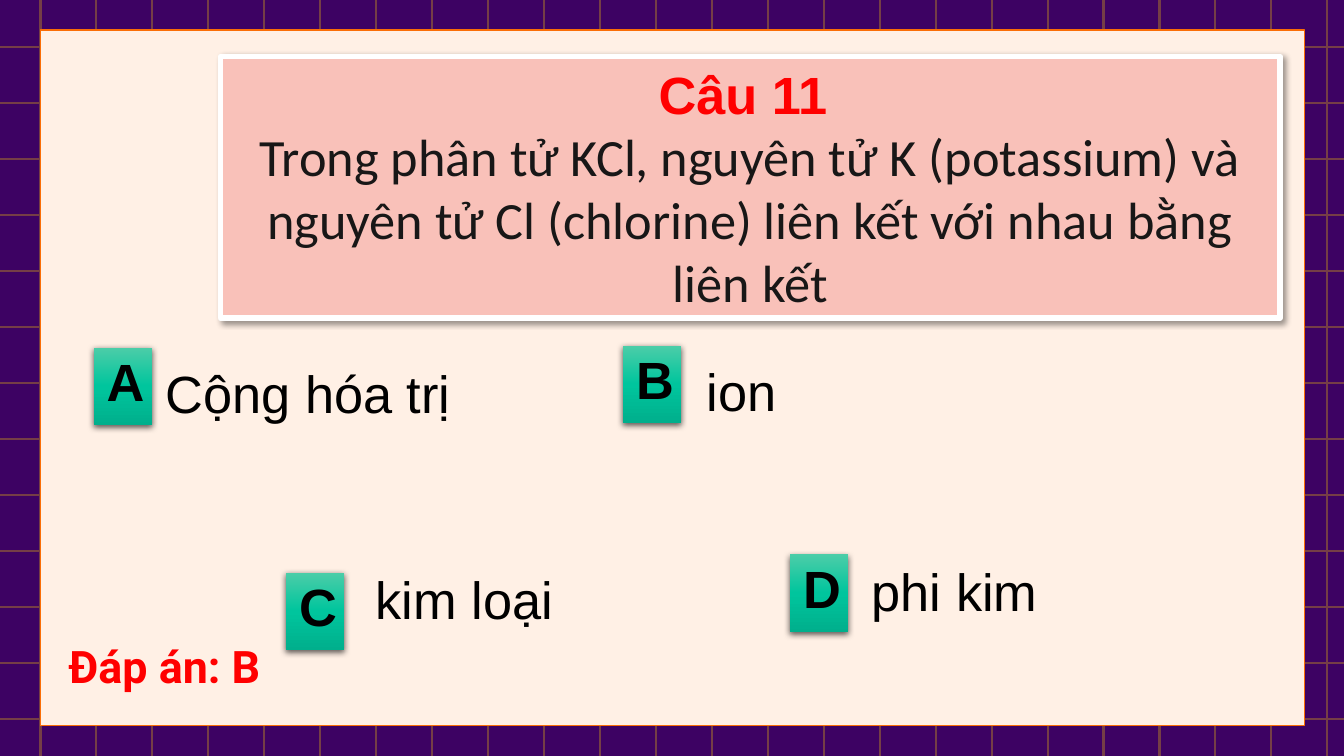
from copy import deepcopy

from lxml import etree
from pptx import Presentation
from pptx.dml.color import RGBColor
from pptx.enum.shapes import MSO_CONNECTOR, MSO_SHAPE
from pptx.enum.text import MSO_ANCHOR, MSO_AUTO_SIZE, PP_ALIGN
from pptx.oxml.ns import qn
from pptx.util import Cm, Pt

RECTANGLE = MSO_SHAPE.RECTANGLE
STRAIGHT = MSO_CONNECTOR.STRAIGHT
LEFT, CENTER, RIGHT = PP_ALIGN.LEFT, PP_ALIGN.CENTER, PP_ALIGN.RIGHT
TOP, MIDDLE, BOTTOM = MSO_ANCHOR.TOP, MSO_ANCHOR.MIDDLE, MSO_ANCHOR.BOTTOM

COLORS = {
    "wall": "3D0263", "grid": "753E46", "panel": "FFF0E5", "panel edge": "FA6D06",
    "question": "F9C1B9", "question edge": "FFFFFF", "question text": "181717",
    "accent": "FF0000", "ink": "000000",
}
TILE_GRADIENT = [(0, "4BCDA8"), (0.5, "00C59D"), (1, "00AF8C")]
WIDTH, HEIGHT, GRID_STEP = 33.87, 19.05, 1.41
TEXT_SIZE = 37.4


def write(shape, paragraphs, align, anchor, margin):
    """Fill a shape with paragraphs of (text, font, size, bold, colour name)."""
    frame = shape.text_frame
    settings = {"word_wrap": True, "auto_size": MSO_AUTO_SIZE.NONE, "vertical_anchor": anchor}
    for side in ("left", "right", "top", "bottom"):
        settings[f"margin_{side}"] = Cm(margin)
    for name, value in settings.items():
        setattr(frame, name, value)
    for index, (text, font, size, bold, color) in enumerate(paragraphs):
        para = frame.add_paragraph() if index else frame.paragraphs[0]
        para.alignment = align
        span = para.add_run()
        span.text = text
        for name, value in {"name": font, "size": Pt(size), "bold": bold}.items():
            setattr(span.font, name, value)
        span.font.color.rgb = RGBColor.from_string(COLORS[color])


def cast_shadow(shape, opacity, blur, distance, angle):
    shape.shadow.inherit = False
    effects = shape.element.spPr.find(qn("a:effectLst"))
    shadow = etree.SubElement(effects, qn("a:outerShdw"), {
        "blurRad": str(Pt(blur)), "dist": str(Pt(distance)),
        "dir": str(angle * 60000), "algn": "ctr", "rotWithShape": "0"})
    color = etree.SubElement(shadow, qn("a:srgbClr"), val=COLORS["ink"])
    etree.SubElement(color, qn("a:alpha"), val=str(opacity * 1000))


deck = Presentation()
deck.slide_width, deck.slide_height = Cm(WIDTH), Cm(HEIGHT)
page = deck.slides.add_slide(deck.slide_layouts[5])
shapes = page.shapes

# Wall with its grid
page.background.fill.solid()
page.background.fill.fore_color.rgb = RGBColor.from_string(COLORS["wall"])
columns = [1.02 + GRID_STEP * step for step in range(24)]
rows = [1.19 + GRID_STEP * step for step in range(13)]
grid = [(x, HEIGHT, x, 0) for x in columns] + [(0, y, WIDTH, y) for y in rows]
for ends in grid:
    line = shapes.add_connector(STRAIGHT, *[Cm(end) for end in ends])
    line.line.color.rgb = RGBColor.from_string(COLORS["grid"])
    line.line.width = Pt(1.5)
    etree.SubElement(line.element.spPr, qn("a:effectLst"))

# Panel
panel = shapes.add_shape(RECTANGLE, Cm(1.02), Cm(0.76), Cm(31.85), Cm(17.53))
panel.shadow.inherit = False
panel.fill.solid()
panel.fill.fore_color.rgb = RGBColor.from_string(COLORS["panel"])
panel.line.color.rgb = RGBColor.from_string(COLORS["panel edge"])
panel.line.width = Pt(1)

# Choices: letter, tile left and top, text, text left, top and width
choices = [
    ("A", 2.36, 8.76, "Cộng hóa trị", 3.84, 8.76, 8.86),
    ("B", 15.7, 8.71, "ion", 17.48, 8.71, 10.24),
    ("C", 7.21, 14.43, "kim loại", 9.14, 13.97, 9.42),
    ("D", 19.91, 13.97, "phi kim", 21.64, 13.77, 8.69),
]
for letter, tile_left, tile_top, text, left, top, width in choices:
    tile = shapes.add_shape(RECTANGLE, Cm(tile_left), Cm(tile_top), Cm(1.47), Cm(1.96))
    tile.fill.gradient()
    tile.fill.gradient_angle = 270
    stop_list = tile.element.spPr.find(".//" + qn("a:gsLst"))
    stop_list.append(deepcopy(stop_list[0]))
    for stop, (position, color) in zip(tile.fill.gradient_stops, TILE_GRADIENT):
        stop.position = position
        stop.color.rgb = RGBColor.from_string(color)
    tile.line.fill.background()
    cast_shadow(tile, 63, 4.5, 1.5, 90)
    write(tile, [(letter, "Arial", TEXT_SIZE, True, "ink")], RIGHT, BOTTOM, 0.33)

    box = shapes.add_textbox(Cm(left), Cm(top), Cm(width), Cm(3.25))
    write(box, [(text, "Arial", TEXT_SIZE, False, "ink")], LEFT, TOP, 0.33)

# Answer
answer = shapes.add_textbox(Cm(0.66), Cm(16.1), Cm(7.26), Cm(1.37))
write(answer, [("Đáp án: B ", "Roboto", 32, True, "accent")], CENTER, TOP, 0)

# Question, brought in front of the panel
question = shapes.title
shapes.element.append(question.element)
place = {"left": 5.56, "top": 1.42, "width": 26.7, "height": 6.6}
for name, value in place.items():
    setattr(question, name, Cm(value))
question.fill.solid()
question.fill.fore_color.rgb = RGBColor.from_string(COLORS["question"])
question.line.color.rgb = RGBColor.from_string(COLORS["question edge"])
question.line.width = Pt(4)
cast_shadow(question, 40, 4, 3, 45)
write(question, [
    ("Câu 11 ", "Arial", TEXT_SIZE, True, "accent"),
    ("Trong phân tử KCl, nguyên tử K (potassium) và nguyên tử Cl (chlorine) "
     "liên kết với nhau bằng liên kết", "Calibri", TEXT_SIZE, False, "question text"),
], CENTER, MIDDLE, 0.25)

deck.save("out.pptx")
